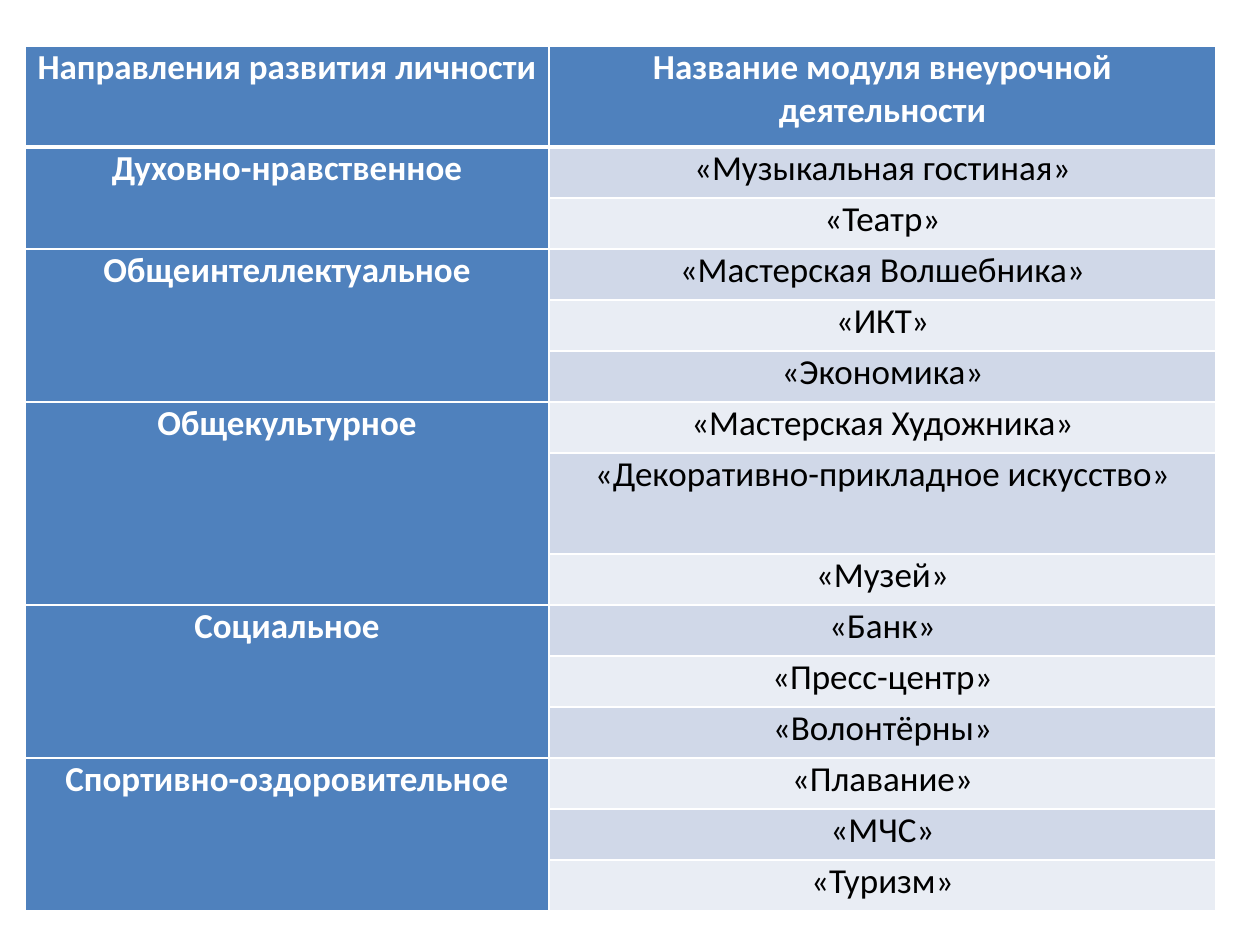
from lxml import etree
from pptx import Presentation
from pptx.dml.color import RGBColor
from pptx.enum.text import PP_ALIGN
from pptx.oxml.ns import qn
from pptx.util import Pt

CENTER = PP_ALIGN.CENTER
EMU_PER_PX = 914400 / 126
COLORS = {
    "accent": "4F81BD",
    "band_dark": "D0D8E8",
    "band_light": "E9EDF4",
    "white": "FFFFFF",
    "black": "000000",
}
HEADINGS = ("Направления развития личности", "Название модуля внеурочной деятельности")
DIRECTIONS = {
    "Духовно-нравственное": ["«Музыкальная гостиная»", "«Театр»"],
    "Общеинтеллектуальное": ["«Мастерская Волшебника»", "«ИКТ»", "«Экономика»"],
    "Общекультурное": [
        "«Мастерская Художника»",
        "«Декоративно-прикладное искусство»",
        "«Музей»",
    ],
    "Социальное": ["«Банк»", "«Пресс-центр»", "«Волонтёрны»"],
    "Спортивно-оздоровительное": ["«Плавание»", "«МЧС»", "«Туризм»"],
}
ROW_HEIGHT, TALL_ROW_HEIGHT = 51, 101
TALL_ROWS = (0, 7)
DIRECTION_WIDTH = 524


def px(length):
    """Turn a length in px into EMU."""
    return round(length * EMU_PER_PX)


def set_attributes(target, values):
    """Set every attribute in values on target."""
    for name, value in values.items():
        setattr(target, name, value)


def add_borders(cell, widths):
    """Draw white cell borders with the given widths in points."""
    properties = cell._tc.get_or_add_tcPr()
    for side, width in widths.items():
        line = etree.SubElement(properties, qn(f"a:ln{side}"), w=str(Pt(width)))
        fill = etree.SubElement(line, qn("a:solidFill"))
        etree.SubElement(fill, qn("a:srgbClr"), val=COLORS["white"])


def format_cell(cell, fill, borders):
    """Give a cell its margins, borders and fill."""
    margins = {"margin_left": px(9), "margin_right": px(9), "margin_top": 0, "margin_bottom": 0}
    set_attributes(cell, margins)
    add_borders(cell, borders)
    cell.fill.solid()
    cell.fill.fore_color.rgb = RGBColor.from_string(COLORS[fill])


def write_cell(cell, wording, color, bold):
    """Write centred wording into a cell."""
    paragraph = cell.text_frame.paragraphs[0]
    paragraph.alignment = CENTER
    run = paragraph.add_run()
    run.text = wording
    set_attributes(run.font, {"name": "Calibri", "size": Pt(20), "bold": bold})
    run.font.color.rgb = RGBColor.from_string(COLORS[color])


def add_module_table(slide, left, top, width):
    """Build the table of directions and their modules in the given box."""
    row_count = 1 + sum(len(modules) for modules in DIRECTIONS.values())
    heights = [TALL_ROW_HEIGHT if row in TALL_ROWS else ROW_HEIGHT for row in range(row_count)]
    frame = slide.shapes.add_table(
        row_count, 2, px(left), px(top), px(width), px(sum(heights))
    )
    table = frame.table
    for column, column_width in enumerate((DIRECTION_WIDTH, width - DIRECTION_WIDTH)):
        table.columns[column].width = px(column_width)
    for row, height in enumerate(heights):
        table.rows[row].height = px(height)
        borders = {"L": 1, "R": 1, "T": 3 if row == 1 else 1, "B": 3 if row == 0 else 1}
        band = "band_dark" if row % 2 else "band_light"
        format_cell(table.cell(row, 0), "accent", borders)
        format_cell(table.cell(row, 1), band if row else "accent", borders)
    for column, heading in enumerate(HEADINGS):
        write_cell(table.cell(0, column), heading, "white", True)
    first = 1
    for direction, modules in DIRECTIONS.items():
        following = first + len(modules)
        table.cell(first, 0).merge(table.cell(following - 1, 0))
        write_cell(table.cell(first, 0), direction, "white", True)
        for row, module in enumerate(modules, first):
            write_cell(table.cell(row, 1), module, "black", False)
        first = following


def main():
    """Build and save the slide."""
    presentation = Presentation()
    set_attributes(presentation, {"slide_width": px(1260), "slide_height": px(945)})
    slide = presentation.slides.add_slide(presentation.slide_layouts[6])
    add_module_table(slide, left=25, top=46, width=1191)
    presentation.save("out.pptx")


if __name__ == "__main__":
    main()
